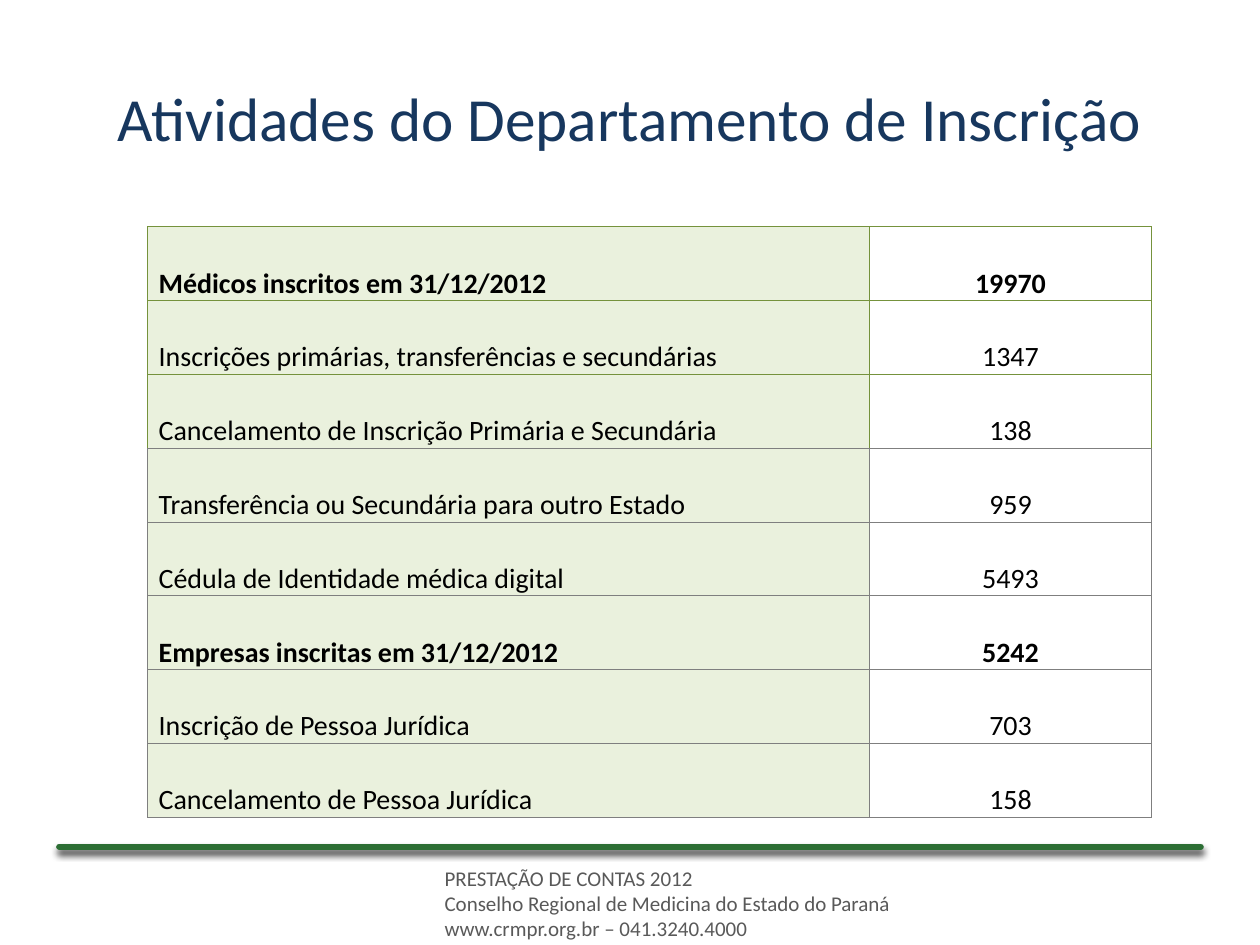
from lxml import etree
from pptx import Presentation
from pptx.dml.color import RGBColor
from pptx.enum.shapes import MSO_CONNECTOR
from pptx.enum.text import MSO_ANCHOR, PP_ALIGN
from pptx.oxml import parse_xml
from pptx.oxml.ns import nsdecls, qn
from pptx.util import Inches, Pt

LEFT, CENTER = PP_ALIGN.LEFT, PP_ALIGN.CENTER
TOP, MIDDLE, BOTTOM = MSO_ANCHOR.TOP, MSO_ANCHOR.MIDDLE, MSO_ANCHOR.BOTTOM
FONT = "Calibri"

TITLE = "Atividades do Departamento de Inscrição"
FOOTER = [
    "PRESTAÇÃO DE CONTAS 2012",
    "Conselho Regional de Medicina do Estado do Paraná",
    "www.crmpr.org.br – 041.3240.4000",
]
# activity, count, bold
ACTIVITIES = [
    ("Médicos inscritos em 31/12/2012", "19970", True),
    ("Inscrições primárias, transferências e secundárias", "1347", False),
    ("Cancelamento de Inscrição Primária e Secundária", "138", False),
    ("Transferência ou Secundária para outro Estado", "959", False),
    ("Cédula de Identidade médica digital", "5493", False),
    ("Empresas inscritas em 31/12/2012", "5242", True),
    ("Inscrição de Pessoa Jurídica", "703", False),
    ("Cancelamento de Pessoa Jurídica", "158", False),
]
# width, fill, alignment, left margin
COLUMNS = [(5.73, "EAF1DD", LEFT, 0.09), (2.24, "FFFFFF", CENTER, 0.01)]
TABLE_LEFT, TABLE_TOP, ROW_HEIGHT = 1.17, 1.8, 0.586
GREEN_BORDER, GREY_BORDER, GREEN_ROWS = "75923C", "7F7F7F", 3


def color(hex_code):
    return RGBColor.from_string(hex_code)


def write(frame, lines, size, hex_code, align=LEFT, bold=False):
    frame.text = "\n".join(lines)
    for paragraph in frame.paragraphs:
        paragraph.alignment = align
        for run in paragraph.runs:
            run.font.name = FONT
            run.font.size = Pt(size)
            run.font.bold = bold
            run.font.color.rgb = color(hex_code)


def add_text(slide, box, lines, size, hex_code, align=LEFT, anchor=TOP):
    frame = slide.shapes.add_textbox(*map(Inches, box)).text_frame
    frame.word_wrap = True
    frame.vertical_anchor = anchor
    write(frame, lines, size, hex_code, align)


def add_borders(cell, row):
    """Outline a cell; the upper rows are green and the rest grey."""
    edge_rows = {"lnL": row, "lnR": row, "lnT": row, "lnB": row + 1}
    properties = cell._tc.get_or_add_tcPr()
    for position, (edge, edge_row) in enumerate(edge_rows.items()):
        border = GREEN_BORDER if edge_row < GREEN_ROWS else GREY_BORDER
        properties.insert(position, parse_xml(
            f'<a:{edge} {nsdecls("a")} w="{Pt(0.5)}"><a:solidFill>'
            f'<a:srgbClr val="{border}"/></a:solidFill></a:{edge}>'))


def add_activity_table(slide):
    table = slide.shapes.add_table(
        len(ACTIVITIES), len(COLUMNS), Inches(TABLE_LEFT), Inches(TABLE_TOP),
        Inches(sum(column[0] for column in COLUMNS)),
        Inches(ROW_HEIGHT * len(ACTIVITIES))).table
    table.first_row = table.horz_banding = False
    for column, (width, *_) in zip(table.columns, COLUMNS):
        column.width = Inches(width)
    for row, (activity, count, bold) in enumerate(ACTIVITIES):
        table.rows[row].height = Inches(ROW_HEIGHT)
        for col, value in enumerate((activity, count)):
            _, fill, align, margin = COLUMNS[col]
            cell = table.cell(row, col)
            cell.margin_left = Inches(margin)
            cell.margin_right = cell.margin_top = Inches(0.01)
            cell.margin_bottom = 0
            cell.vertical_anchor = BOTTOM
            cell.fill.solid()
            cell.fill.fore_color.rgb = color(fill)
            write(cell.text_frame, [value], 16, "000000", align, bold)
            add_borders(cell, row)


def add_footer_rule(slide):
    rule = slide.shapes.add_connector(
        MSO_CONNECTOR.STRAIGHT, *map(Inches, (0.47, 6.72, 9.53, 6.72)))
    rule.line.color.rgb = color("2C6E34")
    rule.line.width = Pt(3.5)
    rule.line._get_or_add_ln().set("cap", "rnd")
    effects = etree.SubElement(rule._element.spPr, qn("a:effectLst"))
    effects.append(parse_xml(
        f'<a:outerShdw {nsdecls("a")} blurRad="{Pt(4)}" dist="{Pt(3)}" '
        'dir="5400000" rotWithShape="0"><a:srgbClr val="000000">'
        '<a:alpha val="73000"/></a:srgbClr></a:outerShdw>'))


def main():
    deck = Presentation()
    deck.slide_width, deck.slide_height = Inches(10), Inches(7.5)
    slide = deck.slides.add_slide(deck.slide_layouts[6])
    add_text(slide, (3.43, 6.82, 4.88, 0.71), FOOTER, 12, "595959")
    add_footer_rule(slide)
    add_text(slide, (0.5, 0.3, 9, 1.25), [TITLE], 35, "17375E", CENTER, MIDDLE)
    add_activity_table(slide)
    deck.save("out.pptx")


if __name__ == "__main__":
    main()
